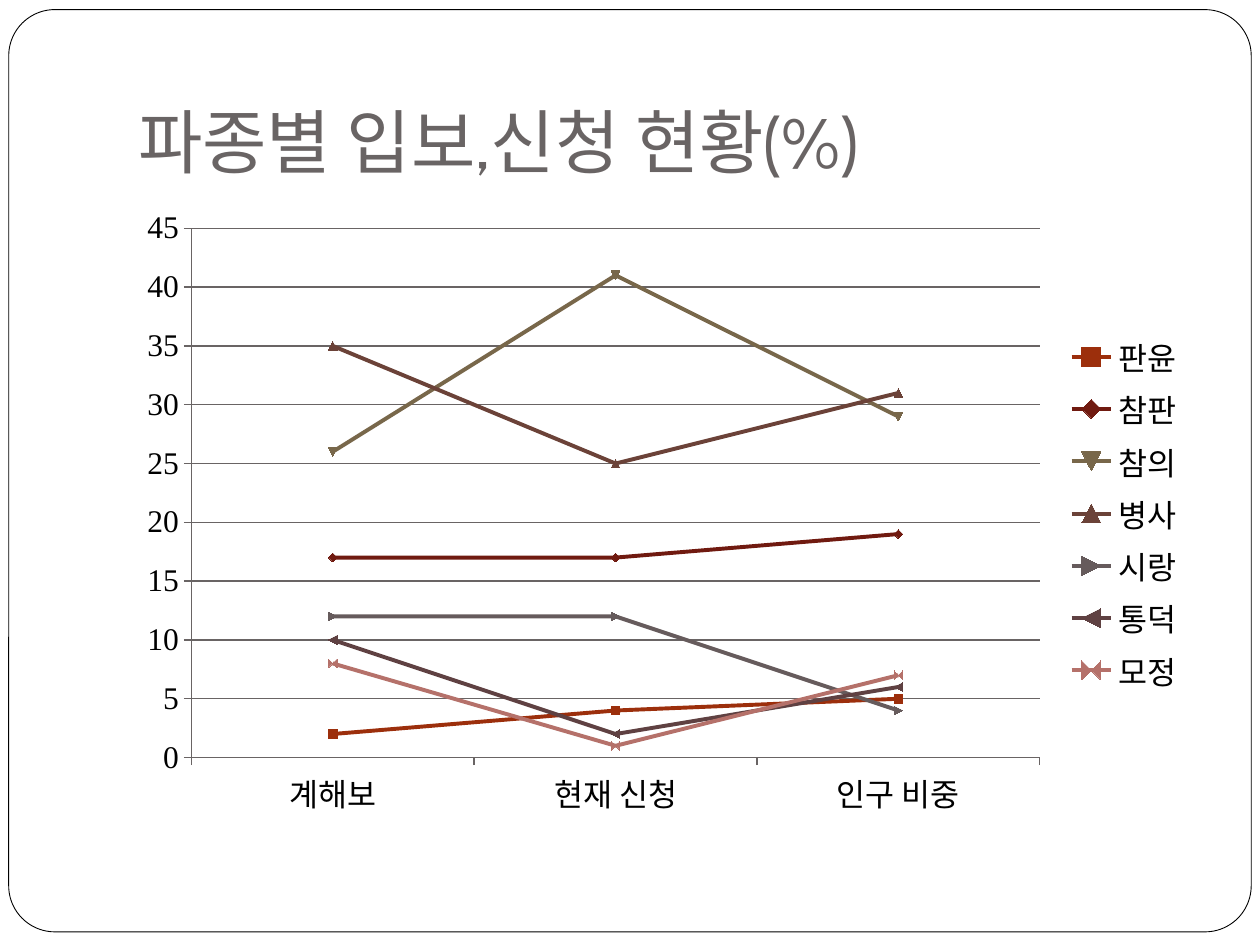
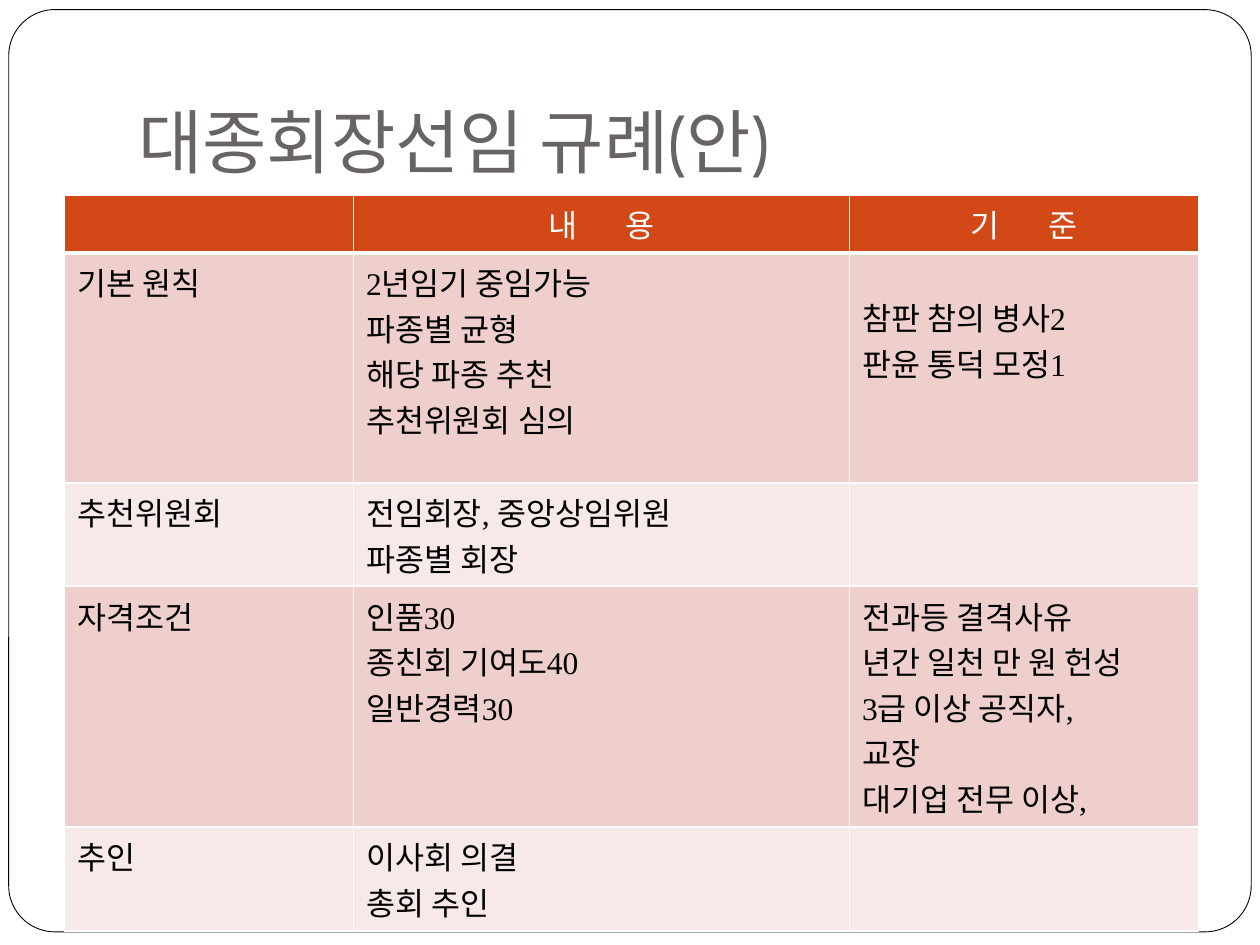
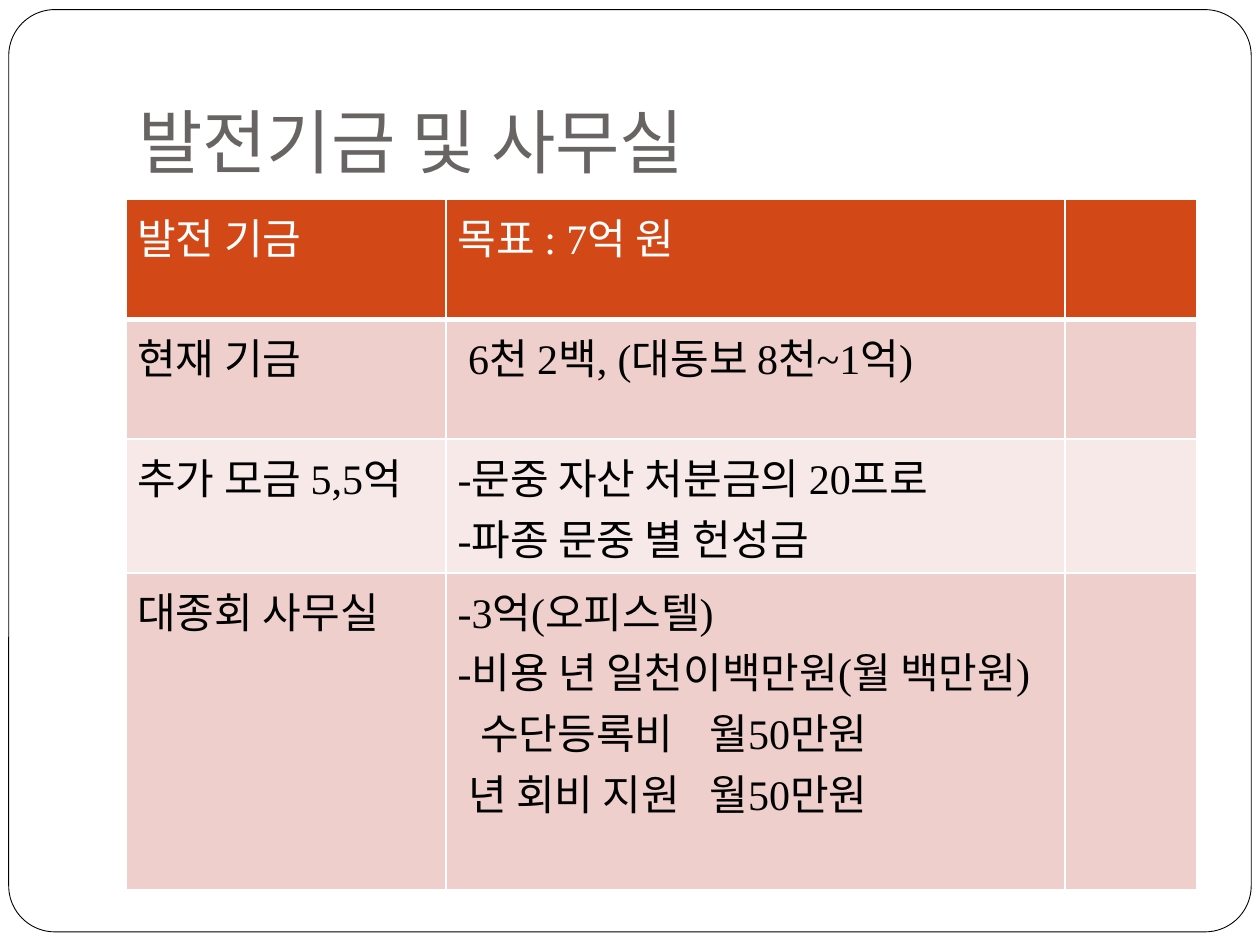
from lxml import etree
from pptx import Presentation
from pptx.chart.data import CategoryChartData
from pptx.dml.color import RGBColor
from pptx.enum.chart import XL_CHART_TYPE, XL_LEGEND_POSITION, XL_TICK_MARK
from pptx.enum.shapes import MSO_SHAPE
from pptx.enum.text import MSO_ANCHOR, PP_ALIGN
from pptx.oxml.ns import qn
from pptx.util import Pt

LINE_MARKERS = XL_CHART_TYPE.LINE_MARKERS
LEGEND_RIGHT = XL_LEGEND_POSITION.RIGHT
TICK_OUTSIDE = XL_TICK_MARK.OUTSIDE
ROUNDED_RECTANGLE = MSO_SHAPE.ROUNDED_RECTANGLE
BOTTOM = MSO_ANCHOR.BOTTOM
CENTER = PP_ALIGN.CENTER

WHITE, BLACK, GRAY, ORANGE = "FFFFFF", "000000", "696464", "D34817"
BANDS = ["EFCFCC", "F7E9E8"]
TITLE_FONT, BODY_FONT = "Cabin", "Times New Roman"


def color(value):
    return RGBColor.from_string(value)


def write(paragraph, text, size=18, font=BODY_FONT, ink=BLACK, align=None,
          spacing=None, indent=None, tab=None):
    run = paragraph.add_run()
    run.text = text
    run.font.size = Pt(size)
    run.font.name = font
    run.font.color.rgb = color(ink)
    if align is not None:
        paragraph.alignment = align
    if spacing:
        run.font._element.set("spc", str(spacing * 100))
    properties = paragraph._p.get_or_add_pPr()
    if indent:
        properties.set("indent", str(Pt(indent)))
    if tab:
        tabs = etree.SubElement(properties, qn("a:tabLst"))
        etree.SubElement(tabs, qn("a:tab"), pos=str(Pt(tab)), algn="l")


presentation = Presentation()
presentation.slide_width, presentation.slide_height = Pt(720), Pt(540)

# Frame and title on every slide
slides = []
for title in ["파종별 입보,신청 현황(%)", "대종회장선임 규례(안)", "발전기금 및 사무실"]:
    slide = presentation.slides.add_slide(presentation.slide_layouts[6])
    frame = slide.shapes.add_shape(ROUNDED_RECTANGLE, Pt(5), Pt(5.5), Pt(710), Pt(527))
    frame.adjustments[0] = 0.05
    frame.shadow.inherit = False
    frame.fill.solid()
    frame.fill.fore_color.rgb = color(WHITE)
    frame.line.color.rgb = color(BLACK)
    frame.line.width = Pt(0.5)

    text_frame = slide.shapes.add_textbox(Pt(72), Pt(21.6), Pt(612), Pt(90)).text_frame
    text_frame.word_wrap = True
    text_frame.vertical_anchor = BOTTOM
    text_frame.margin_bottom = Pt(7.2)
    write(text_frame.paragraphs[0], title, size=40, font=TITLE_FONT, ink=GRAY)
    slides.append(slide)

# Line chart of the branches
branches = [
    ("판윤", [2, 4, 5], "9C2F0C"),
    ("참판", [17, 17, 19], "701A10"),
    ("참의", [26, 41, 29], "78674A"),
    ("병사", [35, 25, 31], "6B4238"),
    ("시랑", [12, 12, 4], "665B5C"),
    ("통덕", [10, 2, 6], "5F4142"),
    ("모정", [8, 1, 7], "B5716A"),
]
chart_data = CategoryChartData()
chart_data.categories = ["계해보", "현재 신청", "인구 비중"]
for name, values, _ in branches:
    chart_data.add_series(name, values)
chart = slides[0].shapes.add_chart(
    LINE_MARKERS, Pt(72), Pt(113.5), Pt(612), Pt(360), chart_data).chart
chart.has_title = False
chart.font.size = Pt(18)
chart.font.name = BODY_FONT
chart.font.color.rgb = color(BLACK)
chart.has_legend = True
chart.legend.position = LEGEND_RIGHT
chart.legend.include_in_layout = False
chart.plots[0].vary_by_categories = False

value_axis = chart.value_axis
value_axis.minimum_scale, value_axis.maximum_scale, value_axis.major_unit = 0, 45, 5
value_axis.has_major_gridlines = True
for axis in (chart.category_axis, value_axis):
    axis.major_tick_mark = TICK_OUTSIDE
for line in (chart.category_axis.format.line, value_axis.format.line,
             value_axis.major_gridlines.format.line):
    line.color.rgb = color(GRAY)
    line.width = Pt(0.75)

for series, (_, _, ink) in zip(chart.plots[0].series, branches):
    series.smooth = False
    series.format.line.color.rgb = color(ink)
    series.format.line.width = Pt(2.25)
    marker_format = series.marker.format
    marker_format.fill.solid()
    marker_format.fill.fore_color.rgb = color(ink)
    marker_format.line.color.rgb = color(ink)

# Tables: a cell is a list of paragraphs, each a text or a text with its format
heading = {"align": CENTER, "spacing": 12}
election_rows = [
    [[], [("내 용", heading)], [("기 준", heading)]],
    [["기본 원칙"],
     ["2년임기 중임가능", "파종별 균형", "해당 파종 추천", "추천위원회 심의"],
     ["참판 참의 병사2", "판윤 통덕 모정1"]],
    [["추천위원회"], ["전임회장, 중앙상임위원", "파종별 회장"], []],
    [["자격조건"],
     ["인품30", "종친회 기여도40", "일반경력30"],
     ["전과등 결격사유", "년간 일천 만 원 헌성", "3급 이상 공직자,", "교장", "대기업 전무 이상,"]],
    [["추인"], ["이사회 의결", "총회 추인"], []],
]
fund_rows = [
    [["발전 기금"], ["목표 : 7억 원"], []],
    [["현재 기금"], [("6천 2백, (대동보 8천~1억)", {"indent": 6})], []],
    [["추가 모금 5,5억"], ["-문중 자산 처분금의 20프로", "-파종 문중 별 헌성금"], []],
    [["대종회 사무실"],
     ["-3억(오피스텔)", "-비용 년 일천이백만원(월 백만원)",
      ("수단등록비\t월50만원", {"indent": 13, "tab": 184}),
      ("년 회비 지원\t월50만원", {"indent": 6, "tab": 184})],
     []],
]
tables = [
    (slides[1], 37, 111.5, [165, 283.5, 199.5], [33, 131.5, 59, 137.5, 59.5],
     18, 7.2, election_rows),
    (slides[2], 72, 114, [183, 353.5, 75.5], [68.5, 68.5, 76.5, 181],
     24, 6.5, fund_rows),
]
built_tables = []
for slide, left, top, widths, heights, size, margin, rows in tables:
    table = slide.shapes.add_table(
        len(heights), len(widths), Pt(left), Pt(top), Pt(sum(widths)), Pt(sum(heights))).table
    table.horz_banding = False
    built_tables.append(table)
    for column, width in zip(table.columns, widths):
        column.width = Pt(width)
    for row_index, (height, cells) in enumerate(zip(heights, rows)):
        table.rows[row_index].height = Pt(height)
        is_header = row_index == 0
        for column_index, lines in enumerate(cells):
            cell = table.cell(row_index, column_index)
            cell.margin_left = cell.margin_right = Pt(margin)
            cell.fill.solid()
            cell.fill.fore_color.rgb = color(ORANGE if is_header else BANDS[(row_index - 1) % 2])
            for line_index, line in enumerate(lines):
                text, text_format = (line, {}) if isinstance(line, str) else line
                if line_index:
                    paragraph = cell.text_frame.add_paragraph()
                else:
                    paragraph = cell.text_frame.paragraphs[0]
                write(paragraph, text, size=size, ink=WHITE if is_header else BLACK, **text_format)

            # White borders, thicker under the header
            cell_properties = cell._tc.get_or_add_tcPr()
            for position, side in enumerate(["lnL", "lnR", "lnT", "lnB"]):
                width = 3 if is_header and side == "lnB" else 1
                border = etree.Element(qn("a:" + side), w=str(Pt(width)))
                fill = etree.SubElement(border, qn("a:solidFill"))
                etree.SubElement(fill, qn("a:srgbClr"), val=WHITE)
                cell_properties.insert(position, border)

# The quota text starts lower in its cell
built_tables[0].cell(1, 2).margin_top = Pt(23.5)

presentation.save("out.pptx")
